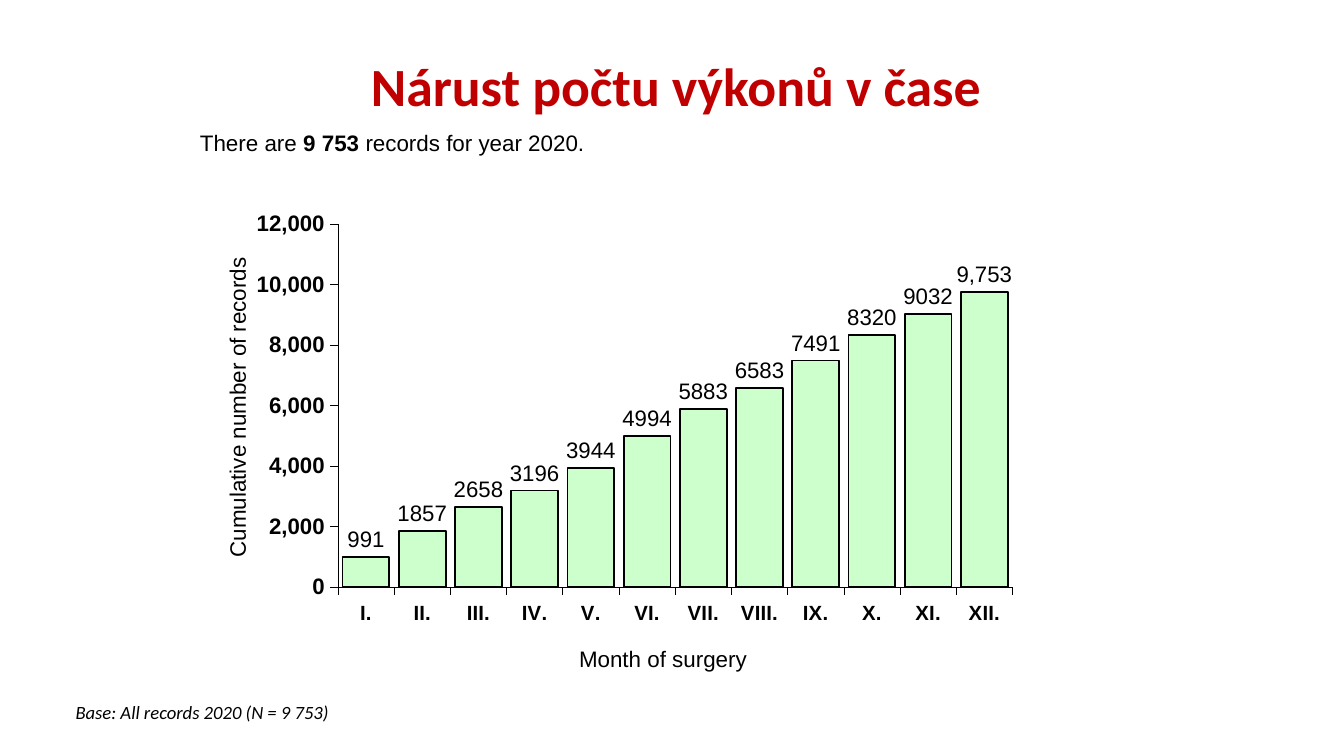
from lxml.etree import SubElement
from pptx import Presentation
from pptx.chart.data import CategoryChartData
from pptx.dml.color import RGBColor
from pptx.enum.chart import XL_CHART_TYPE as ChartType, XL_LABEL_POSITION as LabelPosition
from pptx.enum.chart import XL_TICK_MARK as TickMark
from pptx.enum.text import MSO_ANCHOR as Anchor, PP_ALIGN as Align
from pptx.oxml import parse_xml
from pptx.oxml.ns import nsdecls, qn
from pptx.util import Emu, Pt

PX = 6350
COLORS = {"title": "C00000", "ink": "000000", "bar": "CCFFCC"}
MONTHS = ["I.", "II.", "III.", "IV.", "V.", "VI.", "VII.", "VIII.", "IX.", "X.", "XI.", "XII."]
RECORDS = [991, 1857, 2658, 3196, 3944, 4994, 5883, 6583, 7491, 8320, 9032, 9753]
PLOT_AREA = {"x": 0.1, "y": 0.06, "w": 0.89, "h": 0.83}


def px(*lengths):
    return [Emu(length * PX) for length in lengths]


def color(name):
    return RGBColor.from_string(COLORS[name])


def style_font(font, size, name="Arial", ink="ink", bold=False, italic=False):
    font.name, font.size, font.bold, font.italic = name, Pt(size), bold, italic
    font.color.rgb = color(ink)


def style_line(line, width):
    line.color.rgb = color("ink")
    line.width = Pt(width)


def tighten(frame):
    frame.margin_left = frame.margin_right = px(9)[0]
    frame.margin_top = frame.margin_bottom = px(4)[0]
    frame.paragraphs[0].line_spacing = 0.9


def add_title(slide, wording):
    title = slide.shapes.title
    title.left, title.top, title.width, title.height = px(72, 59, 1305, 72)
    frame = title.text_frame
    frame.word_wrap = True
    frame.vertical_anchor = Anchor.MIDDLE
    tighten(frame)
    paragraph = frame.paragraphs[0]
    paragraph.alignment = Align.CENTER
    run = paragraph.add_run()
    run.text = wording
    style_font(run.font, 28.8, "Calibri", "title", bold=True)


def add_text(slide, box, runs, size=12, align=Align.LEFT, name="Arial", italic=False):
    caption = slide.shapes.add_textbox(*px(*box))
    caption.text_frame.word_wrap = True
    paragraph = caption.text_frame.paragraphs[0]
    paragraph.alignment = align
    for wording, bold in runs:
        run = paragraph.add_run()
        run.text = wording
        style_font(run.font, size, name, bold=bold, italic=italic)
    return caption


def style_axis(axis, size):
    axis.has_major_gridlines = False
    axis.major_tick_mark = TickMark.OUTSIDE
    axis.minor_tick_mark = TickMark.NONE
    style_font(axis.tick_labels.font, size, bold=True)
    style_line(axis.format.line, 0.25)


def style_labels(series):
    labels = series.data_labels
    labels.show_value = True
    labels.number_format, labels.number_format_is_linked = "###0", False
    labels.position = LabelPosition.OUTSIDE_END
    style_font(labels.font, 12)
    total = series.points[len(RECORDS) - 1].data_label
    style_font(total.font, 12)
    total.position = LabelPosition.OUTSIDE_END
    total_xml = series.data_labels._element.find(qn("c:dLbl"))
    total_xml.insert(1, parse_xml(
        f'<c:numFmt {nsdecls("c")} formatCode="#,##0" sourceLinked="0"/>'))


def place_plot(chart):
    plot_area = chart._chartSpace.chart.plotArea
    for old in plot_area.findall(qn("c:layout")):
        plot_area.remove(old)
    layout = parse_xml(f'<c:layout {nsdecls("c")}/>')
    plot_area.insert(0, layout)
    manual = SubElement(layout, qn("c:manualLayout"))
    settings = {"layoutTarget": "inner", "xMode": "edge", "yMode": "edge", **PLOT_AREA}
    for tag, value in settings.items():
        SubElement(manual, qn(f"c:{tag}")).set("val", str(value))


def add_records_chart(slide):
    data = CategoryChartData()
    data.categories = MONTHS
    data.add_series("Series 1", RECORDS)
    chart = slide.shapes.add_chart(
        ChartType.COLUMN_CLUSTERED, *px(275, 212, 818, 469), data).chart
    chart.has_legend = chart.has_title = False
    style_font(chart.font, 18, bold=True)
    style_axis(chart.category_axis, 11)
    value_axis = chart.value_axis
    style_axis(value_axis, 12)
    value_axis.minimum_scale, value_axis.maximum_scale = 0, 12000
    value_axis.major_unit = 2000
    value_axis.tick_labels.number_format = "#,##0"
    value_axis.tick_labels.number_format_is_linked = False
    plot = chart.plots[0]
    plot.gap_width = 20
    plot.vary_by_categories = False
    series = plot.series[0]
    series.format.fill.solid()
    series.format.fill.fore_color.rgb = color("bar")
    style_line(series.format.line, 1)
    style_labels(series)
    place_plot(chart)


def main():
    deck = Presentation()
    deck.slide_width, deck.slide_height = px(1440, 810)
    slide = deck.slides.add_slide(deck.slide_layouts[5])
    add_title(slide, "Nárust počtu výkonů v čase")
    base = add_text(slide, (72, 750, 1008, 59), [("Base: All records 2020 (N = 9 753)", False)],
                    size=10, name="Calibri", italic=True)
    tighten(base.text_frame)
    value_title = add_text(slide, (79, 415, 350, 43), [("Cumulative number of records", False)],
                           align=Align.CENTER)
    value_title.rotation = 270
    add_text(slide, (200, 131, 1038, 43),
             [("There are ", False), ("9 753 ", True), ("records for year 2020.", False)])
    add_text(slide, (475, 684, 471, 43), [("Month of surgery", False)], align=Align.CENTER)
    add_records_chart(slide)
    deck.save("out.pptx")


if __name__ == "__main__":
    main()
